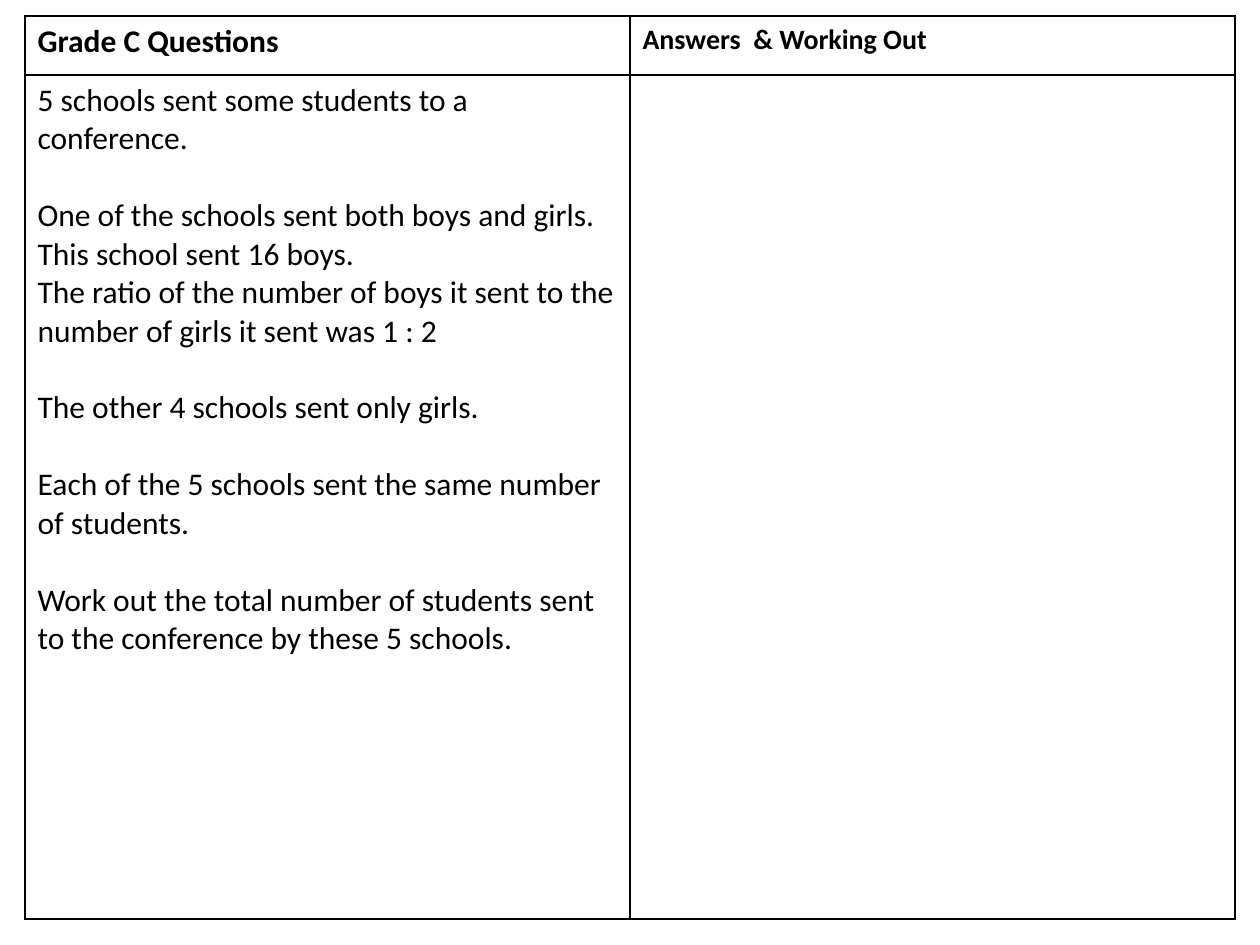
from dataclasses import dataclass

from lxml.etree import SubElement
from pptx import Presentation
from pptx.dml.color import RGBColor
from pptx.oxml.ns import qn
from pptx.table import _Cell
from pptx.util import Emu, Pt

COLORS = {"ink": "000000"}
FONT = "Calibri"
PX_PER_INCH = 126
BLANK_LAYOUT = 6
BORDER_POINTS = 1
PARAGRAPH_GAP = 22

TABLE_LEFT, TABLE_TOP = 25, 16
COLUMN_WIDTH = 605
ROW_HEIGHTS = [59, 844]


@dataclass(frozen=True)
class CellText:
    paragraphs: tuple[str, ...] = ()
    size: int = 18
    bold: bool = False


ROWS = [
    [
        CellText(("Grade C Questions",), bold=True),
        CellText(("Answers  & Working Out",), size=16, bold=True),
    ],
    [
        CellText((
            "5 schools sent some students to a conference.",
            "One of the schools sent both boys and girls.\n"
            "This school sent 16 boys.\n"
            "The ratio of the number of boys it sent to the number of girls it sent was 1 : 2",
            "The other 4 schools sent only girls.",
            "Each of the 5 schools sent the same number of students.",
            "Work out the total number of students sent to the conference by these 5 schools.",
        )),
        CellText(),
    ],
]


def px(length: int) -> Emu:
    return Emu(round(length * 914400 / PX_PER_INCH))


def draw_borders(cell: _Cell) -> None:
    properties = cell._tc.get_or_add_tcPr()
    for side in ("a:lnL", "a:lnR", "a:lnT", "a:lnB"):
        line = SubElement(properties, qn(side), w=str(Pt(BORDER_POINTS)))
        fill = SubElement(line, qn("a:solidFill"))
        SubElement(fill, qn("a:srgbClr"), val=COLORS["ink"])


def write_text(cell: _Cell, content: CellText) -> None:
    frame = cell.text_frame
    for index, text in enumerate(content.paragraphs):
        para = frame.add_paragraph() if index else frame.paragraphs[0]
        para.text = text
        para.space_before = Pt(PARAGRAPH_GAP if index else 0)
        for span in para.runs:
            span.font.name = FONT
            span.font.size = Pt(content.size)
            span.font.bold = content.bold
            span.font.color.rgb = RGBColor.from_string(COLORS["ink"])


def main() -> None:
    deck = Presentation()
    deck.slide_width, deck.slide_height = px(1260), px(945)
    page = deck.slides.add_slide(deck.slide_layouts[BLANK_LAYOUT])

    # Worksheet grid: question on the left, space for working on the right
    column_count = len(ROWS[0])
    table = page.shapes.add_table(
        len(ROWS), column_count, px(TABLE_LEFT), px(TABLE_TOP),
        px(column_count * COLUMN_WIDTH), px(sum(ROW_HEIGHTS)),
    ).table
    table.first_row = table.horz_banding = False
    for column in table.columns:
        column.width = px(COLUMN_WIDTH)

    # Cell contents and rules
    for row, height, contents in zip(table.rows, ROW_HEIGHTS, ROWS):
        row.height = px(height)
        for cell, content in zip(row.cells, contents):
            draw_borders(cell)
            cell.fill.background()
            write_text(cell, content)

    deck.save("out.pptx")


if __name__ == "__main__":
    main()
